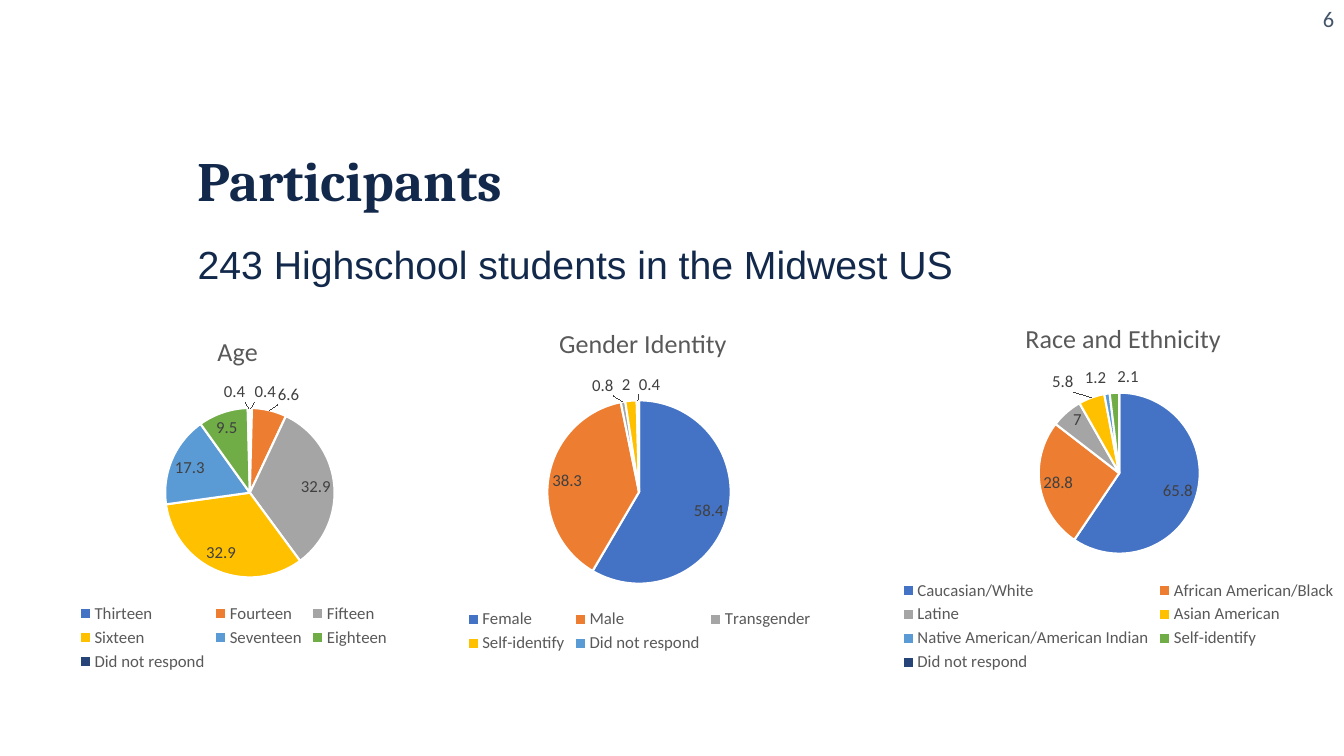
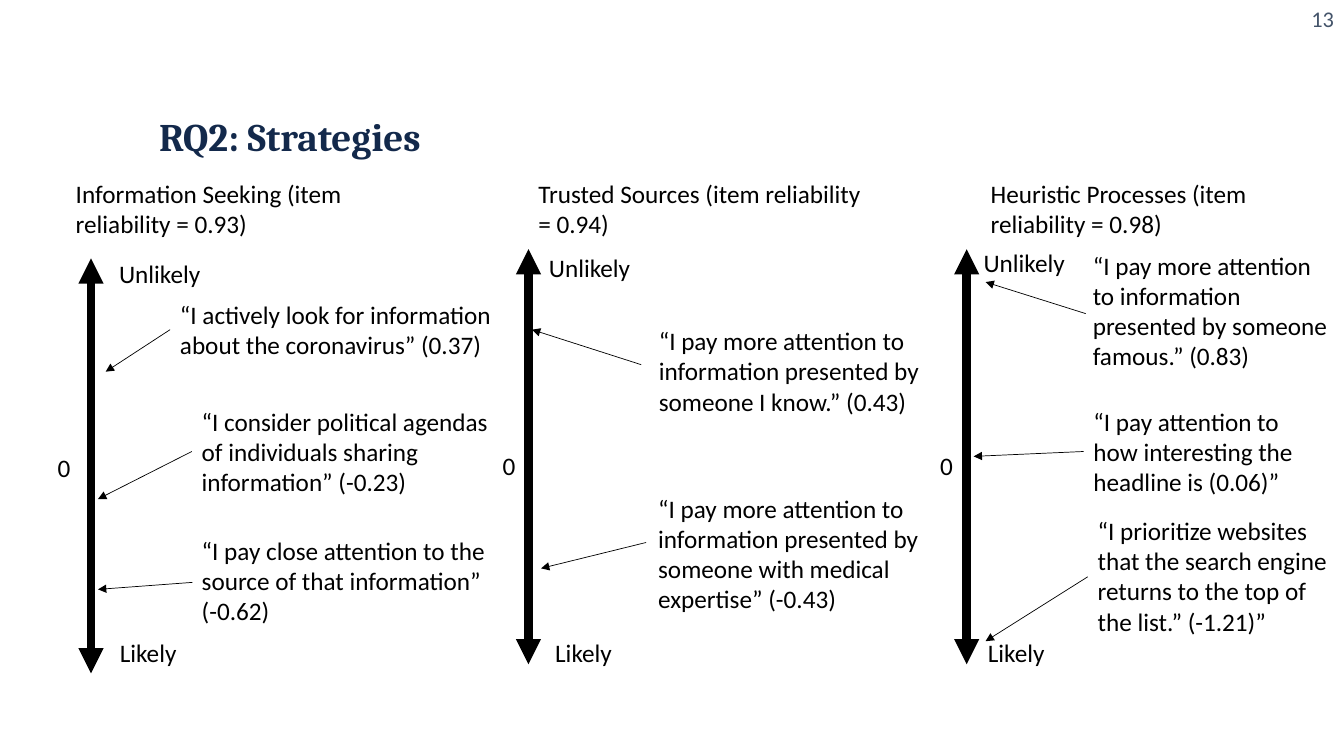
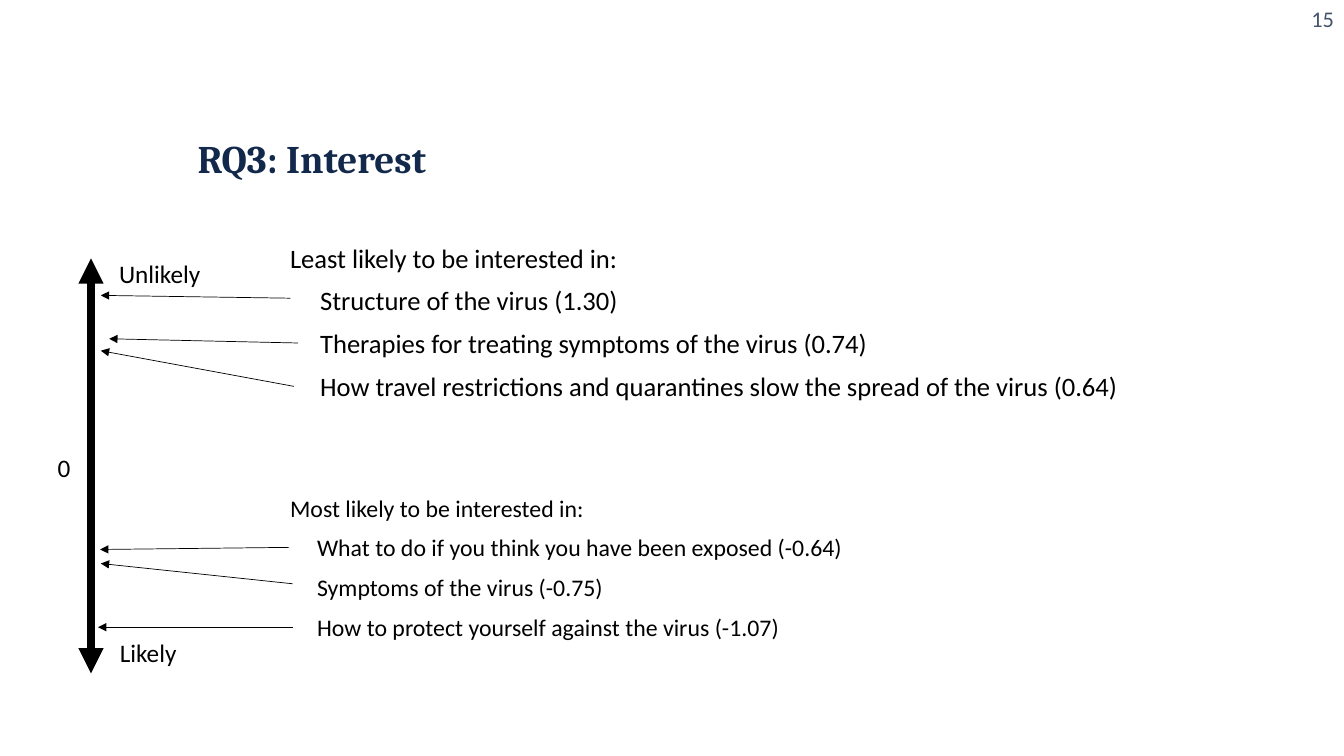
from lxml.etree import SubElement
from pptx import Presentation
from pptx.chart.data import CategoryChartData
from pptx.dml.color import RGBColor
from pptx.enum.chart import XL_CHART_TYPE, XL_LABEL_POSITION, XL_LEGEND_POSITION
from pptx.enum.shapes import MSO_CONNECTOR
from pptx.enum.text import MSO_ANCHOR, MSO_AUTO_SIZE, PP_ALIGN
from pptx.oxml.ns import qn
from pptx.util import Pt

NAVY, BLACK, SLATE, GREY, DARK = "13294B", "000000", "44546A", "595959", "404040"
SLICES = ["4472C4", "ED7D31", "A5A5A5", "FFC000", "5B9BD5", "70AD47", "264478"]
TITLE_ONLY, TITLE_AND_BODY = 5, 1


def rgb(value):
    return RGBColor.from_string(value)


def style_font(font, size, color, name="Calibri", bold=False):
    font.size, font.name, font.bold = Pt(size), name, bold
    font.color.rgb = rgb(color)


def set_layout(element, index, **fractions):
    """Give a chart part a manual layout, as fractions of the chart."""
    for old in element.findall(qn("c:layout")):
        element.remove(old)
    layout = element.makeelement(qn("c:layout"), {})
    element.insert(index, layout)
    manual = SubElement(layout, qn("c:manualLayout"))
    if "w" in fractions:
        SubElement(manual, qn("c:layoutTarget"), val="inner")
    for axis in "xy":
        SubElement(manual, qn(f"c:{axis}Mode"), val="edge")
    for key, value in fractions.items():
        SubElement(manual, qn(f"c:{key}"), val=f"{value:.4f}")


class Deck:
    def __init__(self):
        self.prs = Presentation()
        self.prs.slide_width, self.prs.slide_height = Pt(960), Pt(540)
        self.s = None

    def slide(self, layout, number, title, left, top, size):
        """Start a slide with its title and page number."""
        self.s = self.prs.slides.add_slide(self.prs.slide_layouts[layout])
        tf = self.place(self.s.shapes.title, left, top, 692, 36, MSO_ANCHOR.MIDDLE)
        tf.text = title
        p = tf.paragraphs[0]
        p.alignment, p.line_spacing = PP_ALIGN.LEFT, 0.9
        style_font(p.runs[0].font, size, NAVY, "Cambria", True)
        self.text(number, 744, 0, 216, size=16, color=SLATE, align=PP_ALIGN.RIGHT)

    def place(self, sp, left, top, width, height, anchor):
        sp.left, sp.top, sp.width, sp.height = map(Pt, (left, top, width, height))
        tf = sp.text_frame
        tf.auto_size, tf.word_wrap = MSO_AUTO_SIZE.NONE, True
        tf.vertical_anchor = anchor
        return tf

    def body(self, left, width, items, name="Calibri", color=BLACK):
        """Fill the body with (text, size, indent, space before) items."""
        tf = self.place(self.s.placeholders[1], left, 171.5, width, 300, MSO_ANCHOR.TOP)
        for i, (text, size, indent, before) in enumerate(items):
            p = tf.add_paragraph() if i else tf.paragraphs[0]
            p.text = text
            p.line_spacing, p.space_before = 0.9, Pt(before)
            pPr = p._p.get_or_add_pPr()
            pPr.set("marL", str(Pt(indent)))
            pPr.set("indent", "0")
            SubElement(pPr, qn("a:buNone"))
            style_font(p.runs[0].font, size, color, name)

    def text(self, text, left, top, width, lines=1, size=18, color=BLACK,
             align=PP_ALIGN.LEFT):
        height = 7.2 + 21.9 * lines
        sp = self.s.shapes.add_textbox(Pt(left), Pt(top), Pt(width), Pt(height))
        tf = sp.text_frame
        tf.word_wrap, tf.auto_size = True, MSO_AUTO_SIZE.SHAPE_TO_FIT_TEXT
        tf.text = text
        p = tf.paragraphs[0]
        p.alignment = align
        style_font(p.runs[0].font, size, color)

    def arrow(self, start, end, width=0.5, both=False):
        points = map(Pt, (*start, *end))
        line = self.s.shapes.add_connector(MSO_CONNECTOR.STRAIGHT, *points)
        line.line.color.rgb, line.line.width = rgb(BLACK), Pt(width)
        ln = line.line._get_or_add_ln()
        for end_tag in ["a:headEnd", "a:tailEnd"] if both else ["a:tailEnd"]:
            SubElement(ln, qn(end_tag), type="triangle")
        SubElement(line._element.spPr, qn("a:effectLst"))

    def scale(self, x, top, unlikely, likely, zero):
        """Draw a vertical likelihood scale with its three labels."""
        self.arrow((x, top), (x, top + 296.5), 6, both=True)
        self.text("Unlikely", *unlikely, 108.5)
        self.text("Likely", *likely, 108.5)
        self.text("0", *zero, 24)

    def pie(self, title, title_at, box, center, radius, values):
        left, top, width, height = box
        data = CategoryChartData()
        data.categories = list(values)
        data.add_series("Series 1", list(values.values()))
        chart = self.s.shapes.add_chart(XL_CHART_TYPE.PIE, *map(Pt, box), data).chart
        style_font(chart.font, 12, GREY)

        # Title and legend
        chart.has_title = True
        tf = chart.chart_title.text_frame
        tf.text = title
        style_font(tf.paragraphs[0].runs[0].font, 18.6, GREY)
        set_layout(chart.chart_title._element, 1,
                   x=(title_at[0] - left) / width, y=(title_at[1] - top) / height)
        chart.has_legend = True
        chart.legend.position = XL_LEGEND_POSITION.BOTTOM
        chart.legend.include_in_layout = False
        style_font(chart.legend.font, 12, GREY)

        # Slices and labels
        plot = chart.plots[0]
        plot.vary_by_categories = True
        for i, color in enumerate(SLICES[:len(values)]):
            fmt = plot.series[0].points[i].format
            fmt.fill.solid()
            fmt.fill.fore_color.rgb = rgb(color)
            fmt.line.color.rgb, fmt.line.width = rgb("FFFFFF"), Pt(1.5)
        labels = plot.series[0].data_labels
        labels.show_value, labels.position = True, XL_LABEL_POSITION.BEST_FIT
        style_font(labels.font, 12, DARK)
        plot_area = chart._chartSpace.chart.plotArea
        set_layout(plot_area, 0,
                   x=(center[0] - radius - left) / width,
                   y=(center[1] - radius - top) / height,
                   w=2 * radius / width, h=2 * radius / height)


def participants(deck):
    deck.slide(TITLE_AND_BODY, "6", "Participants", 134, 113, 39.6)
    deck.body(134, 692, [("243 Highschool students in the Midwest US", 28, 0, 0)],
              "Arial", NAVY)
    deck.pie("Age", (152, 234.5), (0, 219.5, 334, 263), (178.5, 352), 60.5,
             {"Thirteen": 0.4, "Fourteen": 6.6, "Fifteen": 32.9, "Sixteen": 32.9,
              "Seventeen": 17.3, "Eighteen": 9.5, "Did not respond": 0.4})
    deck.pie("Gender Identity", (396, 229), (305.5, 214, 302.5, 255.5),
             (456.5, 351.5), 65.5,
             {"Female": 58.4, "Male": 38.3, "Transgender": 0.8,
              "Self-identify": 2, "Did not respond": 0.4})
    deck.pie("Race and Ethnicity", (729, 225), (596, 212.5, 406, 270.5),
             (799.5, 338), 57.5,
             {"Caucasian/White": 65.8, "African American/Black": 28.8, "Latine": 7,
              "Asian American": 5.8, "Native American/American Indian": 1.2,
              "Self-identify": 2.1, "Did not respond": None})


LEFT_SCALE = (65, 184.5, (78, 181), (78.5, 452), (34, 319.5))


def strategies(deck):
    deck.slide(TITLE_ONLY, "13", "RQ2: Strategies", 106.5, 81.5, 27.9)

    # Headings and scales
    for left, name, reliability in [(47, "Information Seeking", "0.93"),
                                    (377.5, "Trusted Sources", "0.94"),
                                    (700.5, "Heuristic Processes", "0.98")]:
        deck.text(f"{name} (item reliability = {reliability})", left, 124, 248.5, 2)
    for scale in [LEFT_SCALE,
                  (377.5, 178, (385, 176.5), (389.5, 452), (352, 318)),
                  (690.5, 178, (695.5, 173), (698.5, 451.5), (664.5, 318))]:
        deck.scale(*scale)

    # Statements: text, left, top, width, lines, arrow start, arrow end
    statements = [
        ("“I actively look for information about the coronavirus” (0.37)",
         121.5, 210, 237.5, 2, (121.5, 235.5), (75.5, 265.5)),
        ("“I consider political agendas of individuals sharing information” (-0.23)",
         137, 286.5, 237.5, 3, (137, 322.5), (70, 356.5)),
        ("“I pay close attention to the source of that information” (-0.62)",
         137, 378.5, 222.5, 3, (137.5, 416), (70, 421)),
        ("“I pay more attention to information presented by someone I know.” (0.43)",
         463.5, 229, 224.5, 3, (458, 260.5), (380, 235.5)),
        ("“I pay more attention to information presented by someone with medical "
         "expertise” (-0.43)",
         463, 348.5, 219.5, 4, (461.5, 387.5), (386.5, 406)),
        ("“I pay more attention to information presented by someone famous.” (0.83)",
         773.5, 175, 186.5, 4, (775.5, 224), (704, 201.5)),
        ("“I pay attention to how interesting the headline is (0.06)”",
         774, 286.5, 179.5, 3, (774, 322.5), (695.5, 326)),
        ("“I prioritize websites that the search engine returns to the top of the "
         "list.” (-1.21)”",
         777, 364.5, 179.5, 4, (777, 412), (704, 458)),
    ]
    for *box, start, end in statements:
        deck.text(*box)
        deck.arrow(start, end)


def interest(deck):
    deck.slide(TITLE_AND_BODY, "15", "RQ3: Interest", 134, 97, 27.9)
    deck.body(200, 626, [
        ("Least likely to be interested in:", 19, 0, 0),
        ("Structure of the virus (1.30)", 19, 21.5, 10),
        ("Therapies for treating symptoms of the virus (0.74)", 19, 21.5, 10),
        ("How travel restrictions and quarantines slow the spread of the virus (0.64)",
         19, 21.5, 10),
        ("Most likely to be interested in:", 17, 0, 67.5),
        ("What to do if you think you have been exposed (-0.64)", 17, 19.25, 10),
        ("Symptoms of the virus (-0.75)", 17, 19.25, 10),
        ("How to protect yourself against the virus (-1.07)", 17, 19.25, 10),
    ])
    deck.scale(*LEFT_SCALE)
    for start, end in [((207.5, 213), (72, 211)), ((213, 245), (78, 242)),
                       ((210, 276), (72, 250.5)), ((206.5, 391), (71.5, 392.5)),
                       ((209, 417), (72, 402.5)), ((209, 448), (70, 448))]:
        deck.arrow(start, end)


def main():
    deck = Deck()
    participants(deck)
    strategies(deck)
    interest(deck)
    deck.prs.save("out.pptx")


if __name__ == "__main__":
    main()
